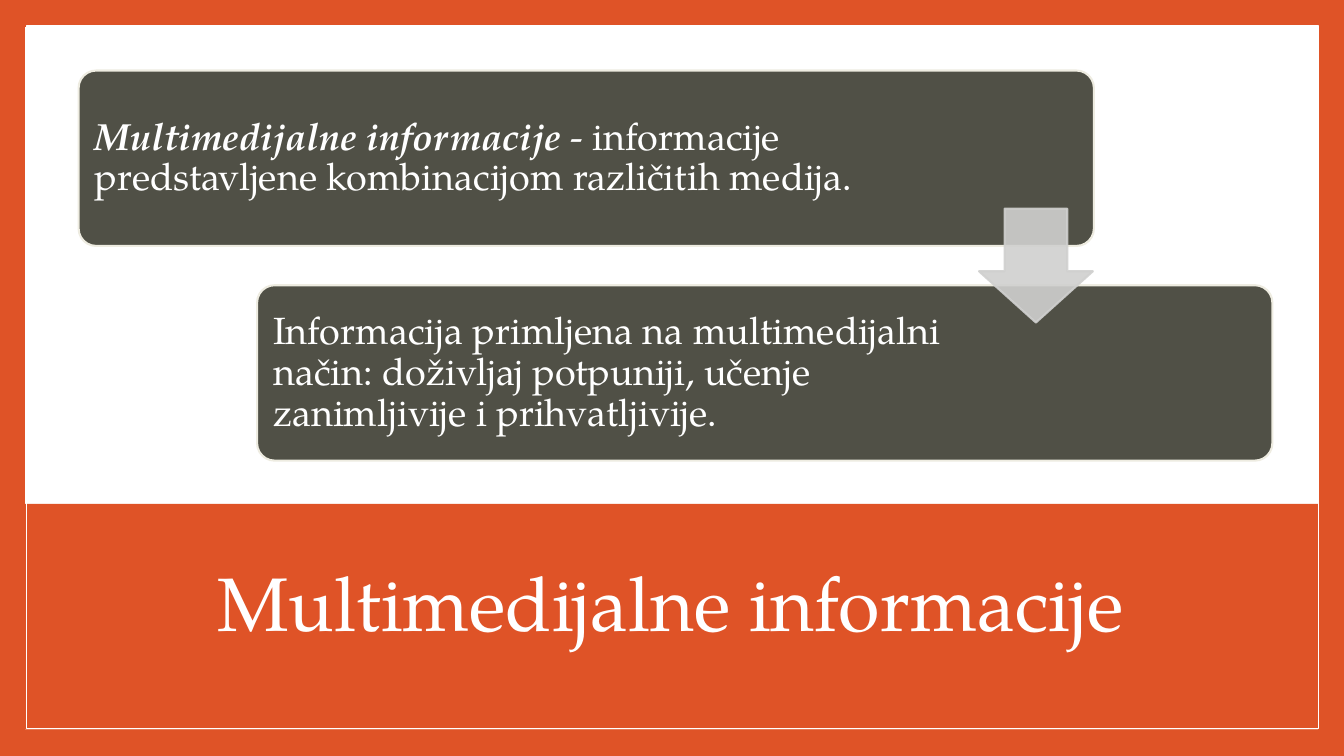
from dataclasses import dataclass

from lxml import etree
from pptx import Presentation, util as u
from pptx.dml.color import RGBColor
from pptx.enum import shapes, text
from pptx.oxml import ns


@dataclass(frozen=True)
class Theme:
    orange: str = "DF5327"
    white: str = "FFFFFF"
    olive: str = "505046"
    cream: str = "EEECE1"
    arrow: str = "D0D0CF"
    font: str = "TeX Gyre Pagella"
    title_size: int = 54
    body_size: int = 27


@dataclass(frozen=True)
class Area:
    left: float
    top: float
    width: float
    height: float

    def lengths(self):
        return [u.Inches(v) for v in (self.left, self.top, self.width, self.height)]


@dataclass(frozen=True)
class Span:
    words: str
    strong: bool = False


@dataclass(frozen=True)
class Step:
    spans: tuple[Span, ...]
    text_width: float


THEME = Theme()
STEPS = (
    Step((Span("Multimedijalne informacije ", strong=True),
          Span("- informacije predstavljene kombinacijom različitih medija.")), 8.27),
    Step((Span("Informacija primljena na multimedijalni način: doživljaj potpuniji, "
               "učenje zanimljivije i prihvatljivije."),), 7.06),
)
FIRST_CARD = Area(0.78, 0.7, 10.07, 1.74)
STEP_RIGHT, STEP_DOWN = 1.77, 2.13
CARD_INSET = 0.05


def add_block(page, kind, area: Area, fill: str | None = None, line: str | None = None,
              line_width: float = 1.5, adjustments: tuple[float, ...] = ()):
    block = page.shapes.add_shape(kind, *area.lengths())
    block.shadow.inherit = False
    for index, value in enumerate(adjustments):
        block.adjustments[index] = value
    if fill:
        block.fill.solid()
        block.fill.fore_color.rgb = RGBColor.from_string(fill)
    else:
        block.fill.background()
    if line:
        block.line.color.rgb = RGBColor.from_string(line)
        block.line.width = u.Pt(line_width)
    else:
        block.line.fill.background()
    return block


def add_words(page, area: Area, spans: tuple[Span, ...], size: int,
              align=text.PP_ALIGN.LEFT, inset: float = 0.1) -> None:
    box = page.shapes.add_textbox(*area.lengths())
    frame = box.text_frame
    frame.word_wrap = True
    frame.vertical_anchor = text.MSO_ANCHOR.MIDDLE
    frame.margin_left = frame.margin_right = u.Inches(inset)
    frame.margin_top = frame.margin_bottom = u.Inches(inset)
    para = frame.paragraphs[0]
    para.alignment = align
    para.line_spacing = 0.9
    for span in spans:
        run = para.add_run()
        run.text = span.words
        run.font.name = THEME.font
        run.font.size = u.Pt(size)
        run.font.bold = run.font.italic = span.strong
        run.font.color.rgb = RGBColor.from_string(THEME.white)


def set_opacity(block, percent: int) -> None:
    """Apply one opacity to both the fill and the outline."""
    for color in block.fill._xPr.iter(ns.qn("a:srgbClr")):
        etree.SubElement(color, ns.qn("a:alpha"), val=str(percent * 1000))


def add_step(page, index: int, step: Step) -> None:
    card = Area(FIRST_CARD.left + index * STEP_RIGHT, FIRST_CARD.top + index * STEP_DOWN,
                FIRST_CARD.width, FIRST_CARD.height)
    add_block(page, shapes.MSO_SHAPE.ROUNDED_RECTANGLE, card, THEME.olive, THEME.cream,
              adjustments=(0.1,))
    words_area = Area(card.left + CARD_INSET, card.top + CARD_INSET,
                      step.text_width, card.height - 2 * CARD_INSET)
    add_words(page, words_area, step.spans, THEME.body_size, inset=0.11)


def main() -> None:
    deck = Presentation()
    deck.slide_width, deck.slide_height = u.Inches(13.33), u.Inches(7.5)
    page = deck.slides.add_slide(deck.slide_layouts[6])
    page.background.fill.solid()
    page.background.fill.fore_color.rgb = RGBColor.from_string(THEME.orange)

    rectangle = shapes.MSO_SHAPE.RECTANGLE
    add_block(page, rectangle, Area(0.25, 0.27, 12.82, 6.97), THEME.white)
    add_block(page, rectangle, Area(0.25, 5, 12.82, 2.24), THEME.orange)
    add_words(page, Area(1.25, 5.28, 10.8, 1.48), (Span("Multimedijalne informacije"),),
              THEME.title_size, text.PP_ALIGN.CENTER)
    add_block(page, rectangle, Area(0.26, 0.26, 12.82, 6.97), line=THEME.white, line_width=1)

    for index, step in enumerate(STEPS):
        add_step(page, index, step)
    arrow = add_block(page, shapes.MSO_SHAPE.DOWN_ARROW, Area(9.71, 2.07, 1.13, 1.13),
                      THEME.arrow, THEME.arrow)
    # Down arrow adjustments: shaft width, then head length.
    arrow.adjustments[0], arrow.adjustments[1] = 0.55, 0.45
    set_opacity(arrow, 90)
    deck.save("out.pptx")


if __name__ == "__main__":
    main()
